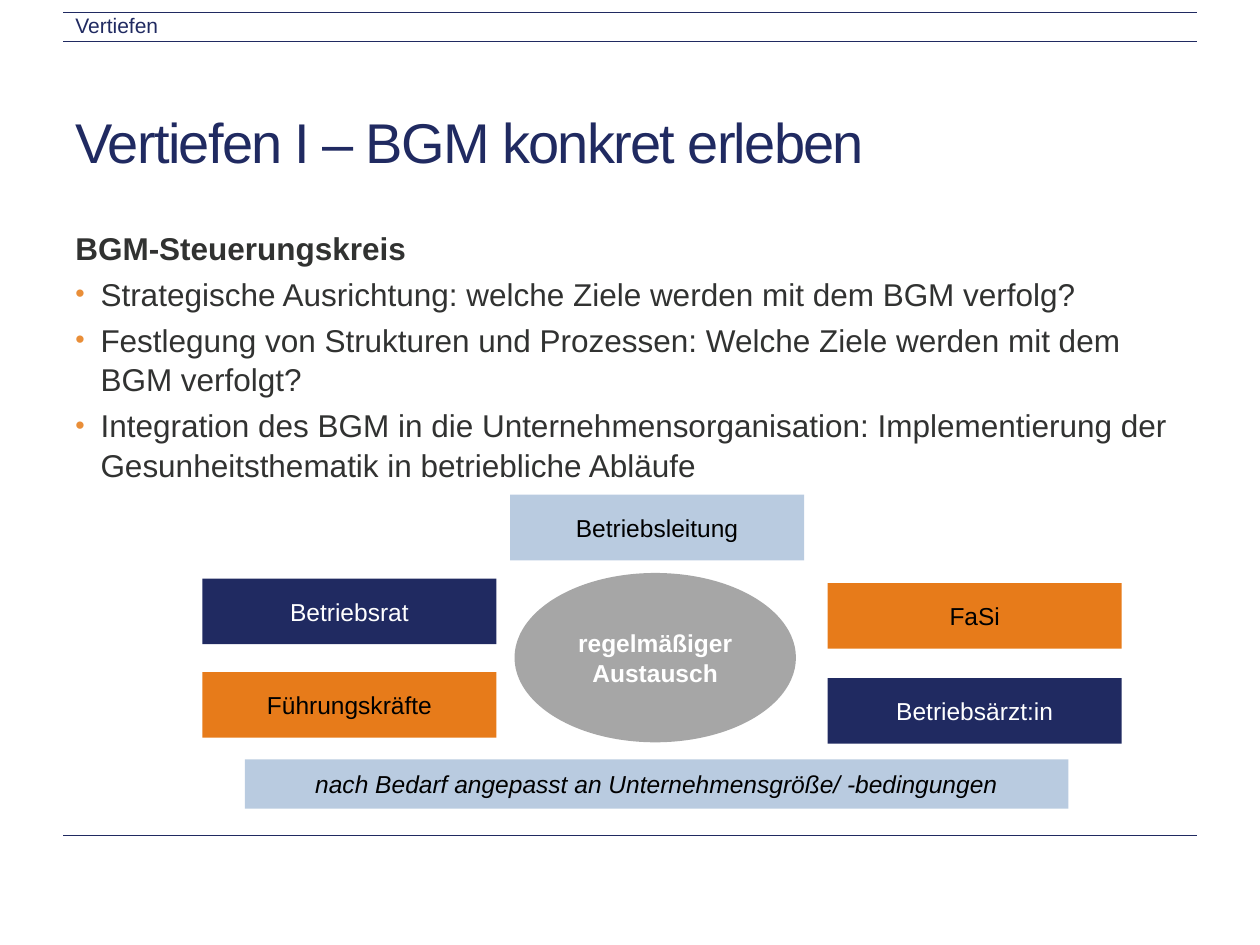
"""Build the slide on the BGM steering group."""
from lxml import etree
from pptx import Presentation
from pptx.dml.color import RGBColor
from pptx.enum.shapes import MSO_CONNECTOR, MSO_SHAPE
from pptx.enum.text import MSO_ANCHOR, PP_ALIGN
from pptx.oxml.ns import qn
from pptx.util import Pt

LINE = MSO_CONNECTOR.STRAIGHT
RECT, OVAL = MSO_SHAPE.RECTANGLE, MSO_SHAPE.OVAL
TOP, MIDDLE = MSO_ANCHOR.TOP, MSO_ANCHOR.MIDDLE
CENTER = PP_ALIGN.CENTER
NAVY = RGBColor(0x20, 0x2A, 0x61)
ORANGE = RGBColor(0xE7, 0x7B, 0x1A)
PALE = RGBColor(0xB9, 0xCB, 0xE0)
GREY = RGBColor(0xA6, 0xA6, 0xA6)
DARK = RGBColor(0x31, 0x32, 0x31)
BLACK = RGBColor(0, 0, 0)
WHITE = RGBColor(255, 255, 255)
BULLET = "E98E38"
FONT = "Arial"

LEFT, WIDE = 36, 648
RULES = [7.2, 23.8, 477.4]
HEADER = "Vertiefen"
TITLE = "Vertiefen I – BGM konkret erleben"
HEADING = "BGM-Steuerungskreis"
POINTS = [
    "Strategische Ausrichtung: welche Ziele werden mit dem BGM verfolg?",
    "Festlegung von Strukturen und Prozessen: Welche Ziele werden mit dem BGM verfolgt?",
    "Integration des BGM in die Unternehmensorganisation: Implementierung der "
    "Gesunheitsthematik in betriebliche Abläufe",
]
BOX_W, BOX_H = 168, 37.5
ROLES = [
    ("Betriebsleitung", 291.5, 282.7, PALE, BLACK),
    ("FaSi", 473, 333.2, ORANGE, BLACK),
    ("Betriebsärzt:in", 473, 387.5, NAVY, WHITE),
    ("Betriebsrat", 115.7, 330.6, NAVY, WHITE),
    ("Führungskräfte", 115.7, 384, ORANGE, BLACK),
]
HUB = "regelmäßiger\nAustausch"
NOTE = "nach Bedarf angepasst an Unternehmensgröße/ -bedingungen"


def style(frame, text, size, color, bold=False, italic=False):
    frame.word_wrap = True
    frame.text = text
    for para in frame.paragraphs:
        for run in para.runs:
            font = run.font
            font.name, font.size = FONT, Pt(size)
            font.bold, font.italic = bold, italic
            font.color.rgb = color


def add_text(slide, text, top, width, height, size, color, anchor=TOP):
    box = slide.shapes.add_textbox(Pt(LEFT), Pt(top), Pt(width), Pt(height))
    style(box.text_frame, text, size, color)
    box.text_frame.vertical_anchor = anchor
    return box.text_frame


def add_box(slide, kind, text, place, fill, color, **look):
    shape = slide.shapes.add_shape(kind, *map(Pt, place))
    shape.shadow.inherit = False
    shape.fill.solid()
    shape.fill.fore_color.rgb = fill
    shape.line.fill.background()
    style(shape.text_frame, text, 14, color, **look)
    shape.text_frame.vertical_anchor = MIDDLE
    for para in shape.text_frame.paragraphs:
        para.alignment = CENTER


def add_rule(slide, y):
    rule = slide.shapes.add_connector(LINE, Pt(LEFT), Pt(y), Pt(LEFT + WIDE), Pt(y))
    rule.line.color.rgb = NAVY
    rule.line.width = Pt(0.5)
    etree.SubElement(rule._element.spPr, qn("a:effectLst"))


def add_bullet(para):
    props = para._p.get_or_add_pPr()
    props.set("marL", str(Pt(14.4)))
    props.set("indent", str(-Pt(14.4)))
    color = etree.SubElement(props, qn("a:buClr"))
    etree.SubElement(color, qn("a:srgbClr"), val=BULLET)
    etree.SubElement(props, qn("a:buSzPct"), val="85000")
    etree.SubElement(props, qn("a:buFont"), typeface=FONT)
    etree.SubElement(props, qn("a:buChar"), char="•")


def main():
    deck = Presentation()
    deck.slide_width, deck.slide_height = Pt(720), Pt(540)
    slide = deck.slides.add_slide(deck.slide_layouts[6])

    for y in RULES:
        add_rule(slide, y)
    title = add_text(slide, TITLE, 41.8, WIDE, 77.8, 32, NAVY, MIDDLE)
    title.paragraphs[0].runs[0].font._element.set("spc", "-100")

    body = add_text(slide, "\n".join([HEADING, *POINTS]), 126, WIDE, 350.6, 18, DARK)
    head, *rest = body.paragraphs
    head.line_spacing = 1.05
    head.runs[0].font.bold = True
    for para in rest:
        para.line_spacing = 1.05
        para.space_before = Pt(3.6)
        add_bullet(para)
    add_text(slide, HEADER, 3.6, 309.6, 23.8, 12, NAVY)

    for text, x, y, fill, color in ROLES:
        add_box(slide, RECT, text, (x, y, BOX_W, BOX_H), fill, color)
    add_box(slide, OVAL, HUB, (294, 327.4, 160.8, 96.8), GREY, WHITE, bold=True)
    add_box(slide, RECT, NOTE, (140, 433.9, 470.6, 28.2), PALE, BLACK, italic=True)
    deck.save("out.pptx")


if __name__ == "__main__":
    main()
